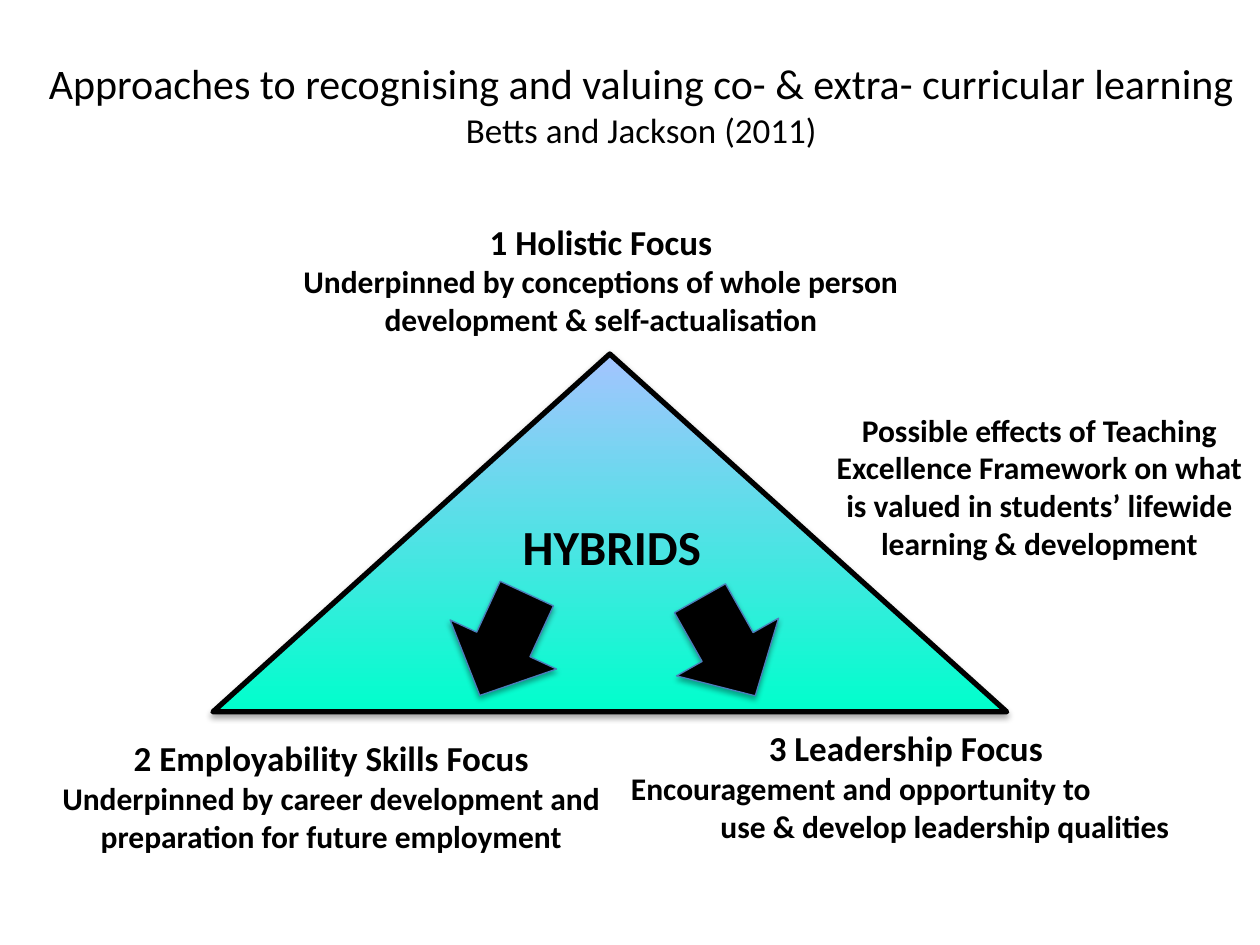
import pptx
import pptx.util
import pptx.dml.color
import pptx.enum.shapes
import pptx.enum.text
import pptx.oxml
import pptx.oxml.ns

Inches = pptx.util.Inches
Pt = pptx.util.Pt
RGBColor = pptx.dml.color.RGBColor
Kind = pptx.enum.shapes.MSO_SHAPE
Align = pptx.enum.text.PP_ALIGN

BLACK = RGBColor(0x00, 0x00, 0x00)
BLUE = RGBColor(0x4B, 0x7E, 0xBC)
MINT = RGBColor(0x00, 0xFF, 0xCC)
SKY = RGBColor(0xA4, 0xC4, 0xFF)

SHADOW = (
    f'<a:outerShdw {pptx.oxml.ns.nsdecls("a")} blurRad="40000" dist="23000" '
    'dir="5400000" rotWithShape="0"><a:srgbClr val="000000">'
    '<a:alpha val="35000"/></a:srgbClr></a:outerShdw>'
)


class Deck:
    font = "Calibri"

    def __init__(self):
        self.prs = pptx.Presentation()
        self.prs.slide_width = Inches(10)
        self.prs.slide_height = Inches(7.5)
        self.slide = self.prs.slides.add_slide(self.prs.slide_layouts[6])

    def text(self, box, lines, bold=True, align=Align.CENTER, wrap=True):
        shape = self.slide.shapes.add_textbox(*map(Inches, box))
        frame = shape.text_frame
        frame.word_wrap = wrap
        for i, (words, size) in enumerate(lines):
            para = frame.paragraphs[0] if i == 0 else frame.add_paragraph()
            para.text = words
            para.alignment = align
            para.font.name = self.font
            para.font.size = Pt(size)
            para.font.bold = bold
            para.font.color.rgb = BLACK
        return frame

    def shape(self, kind, box, line, width, turn=0):
        shape = self.slide.shapes.add_shape(kind, *map(Inches, box))
        shape.rotation = turn
        shape.line.color.rgb = line
        shape.line.width = Pt(width)
        shape.shadow.inherit = False
        effects = shape._element.spPr.find(pptx.oxml.ns.qn("a:effectLst"))
        effects.append(pptx.oxml.parse_xml(SHADOW))
        return shape

    def peak(self, box):
        shape = self.shape(Kind.ISOSCELES_TRIANGLE, box, BLACK, 3)
        shape.adjustments[0] = 0.5
        shape.fill.gradient()
        shape.fill.gradient_angle = 90
        for stop, color, place in zip(shape.fill.gradient_stops, (MINT, SKY), (0, 1)):
            stop.color.rgb = color
            stop.position = place

    def arrow(self, left, top, turn):
        shape = self.shape(Kind.DOWN_ARROW, (left, top, 0.93, 0.89), BLUE, 0.75, turn)
        shape.fill.solid()
        shape.fill.fore_color.rgb = BLACK


def main():
    deck = Deck()
    deck.text((0.18, 0.41, 9.82, 0.84), [
        ("Approaches to recognising and valuing co- & extra- curricular learning", 24),
        ("Betts and Jackson (2011)", 20),
    ], bold=False)
    deck.text((2.13, 1.7, 5.28, 1.68), [
        ("1 Holistic Focus", 20),
        ("Underpinned by conceptions of whole person development & self-actualisation", 18),
    ])
    deck.text((0.35, 5.8, 4.56, 0.66), [
        ("2 Employability Skills Focus", 20),
        ("Underpinned by career development and preparation for future employment", 18),
    ])
    lead = deck.text((4.91, 5.72, 4.56, 0.66), [
        ("3 Leadership Focus", 20),
        ("Encouragement and opportunity to\vuse & develop leadership qualities", 18),
    ])
    hang = lead.paragraphs[1]
    hang.alignment = Align.LEFT
    props = hang._p.get_or_add_pPr()
    props.set("marL", str(Inches(0.71)))
    props.set("indent", str(-Inches(0.71)))

    deck.peak((1.69, 2.81, 6.3, 2.84))
    deck.text((4.05, 4.05, 2.2, 0.66), [("HYBRIDS", 28)], align=Align.LEFT)
    deck.arrow(3.53, 4.67, 24.8)
    deck.arrow(5.31, 4.69, 330.5)
    deck.text((6.5, 3.21, 3.5, 1.31), [(words, 18) for words in (
        "Possible effects of Teaching",
        "Excellence Framework on what",
        "is valued in students’ lifewide",
        "learning & development",
    )], wrap=False)
    deck.prs.save("out.pptx")


if __name__ == "__main__":
    main()
